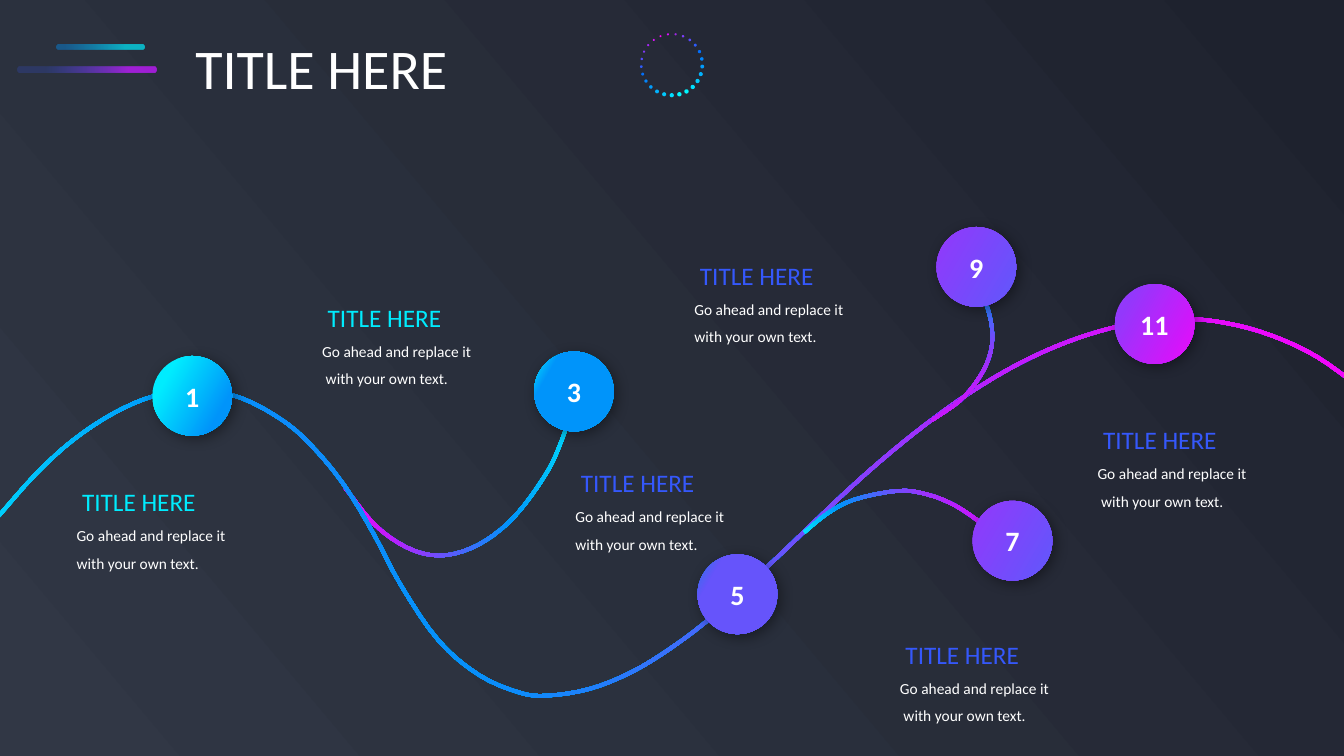
import math

from lxml import etree
from pptx import Presentation
from pptx import util as u
from pptx.dml.color import RGBColor
from pptx.enum import shapes, text
from pptx.oxml import ns

FONT = "Calibri"
WHITE = "FFFFFF"
CYAN = "00ECFE"
AZURE = "0094FA"
BLUE = "3558FB"
VIOLET = "6654FB"
PURPLE = "9338FB"
MAGENTA = "BE1DFB"

CURVE_WIDTH = 0.09
CURVE_STEPS = 4
CURVE_STOPS = [(0, CYAN), (27, AZURE), (76, MAGENTA), (100, "FC02F9")]
CURVES = [
    (185, [(8.7, 12.29), (9.42, 13.2), (10.24, 13.79), (11.05, 14), (11.86, 13.82),
           (12.6, 13.36), (13.21, 12.73), (13.82, 11.84), (14.15, 11.11), (14.41, 10.36)]),
    (320, [(-0.03, 13), (0.89, 11.96), (1.83, 11.1), (2.87, 10.41), (3.91, 9.97),
           (4.93, 9.83), (6.05, 10.02), (7.19, 10.64), (7.98, 11.37), (8.71, 12.28),
           (9.42, 13.46), (10.11, 14.76), (11.05, 16.14), (12.07, 17.01), (13.08, 17.45),
           (13.79, 17.53), (14.86, 17.36), (15.93, 16.93), (16.94, 16.31), (17.93, 15.56),
           (18.85, 14.73), (19.71, 13.93), (20.45, 13.22), (21.26, 12.45), (22.2, 11.61),
           (23.27, 10.74), (24.41, 9.92), (25.65, 9.18), (26.97, 8.59), (28.35, 8.19),
           (29.77, 8.04), (30.89, 8.14), (32.03, 8.45), (33.17, 8.98), (34.29, 9.78)]),
    (320, [(20.27, 13.42), (20.84, 12.95), (21.53, 12.59), (22.63, 12.37),
           (23.37, 12.46), (24.09, 12.75), (24.84, 13.27), (25.21, 13.63)]),
    (58.5, [(24.27, 6.71), (24.65, 7.23), (24.9, 7.8), (25.01, 8.42),
            (24.93, 9), (24.65, 9.56), (24.19, 10.1), (23.48, 10.59)]),
]

RING_COLORS = """01DEFF 00F7FF 00F7FF 00DFFE 01C9FD 02B2FD 029CFD 0285FB 036EFA
2D5CFA 5748FD 7D3EFC 9F26E7 D813FB FC02F9 D912FC AA27FB 7F39F6 564EFC 2E5CFB
026FF9 0384FB 029CFB 02B2FD 01C9FD""".split()

BARS = [
    (0.44, 1.69, 3.51, [(0, BLUE, 20), (21, BLUE, 20), (80, MAGENTA, 80), (100, MAGENTA, 80)]),
    (1.42, 1.12, 2.21, [(0, AZURE, 40), (10, AZURE, 40), (79, CYAN, 70), (100, CYAN, 70)]),
]

PURPLE_STOPS = [(0, PURPLE), (89, VIOLET), (100, VIOLET)]
NODES = [
    ("1", 3.84, 8.97, [(0, CYAN), (21, CYAN), (80, AZURE), (100, AZURE)]),
    ("3", 13.46, 8.86, [(0, CYAN), (22, AZURE), (100, AZURE)]),
    ("5", 17.58, 13.97, [(0, "2676E8"), (22, VIOLET), (100, VIOLET)]),
    ("7", 24.51, 12.62, PURPLE_STOPS),
    ("9", 23.6, 5.72, PURPLE_STOPS),
    ("11", 28.09, 7.16, [(0, PURPLE), (18, PURPLE), (100, "E90AFA")]),
]

CAPTIONS = [
    (1.68, 11.76, CYAN, 0),
    (22.43, 15.6, BLUE, 0.09),
    (7.87, 7.11, CYAN, 0.09),
    (14.25, 11.28, BLUE, 0),
    (17.25, 6.05, BLUE, 0),
    (27.41, 10.19, BLUE, 0.09),
]


def color(code):
    return RGBColor.from_string(code)


def add_color(parent, code, opacity):
    element = etree.SubElement(parent, ns.qn("a:srgbClr"), val=code)
    if opacity < 100:
        etree.SubElement(element, ns.qn("a:alpha"), val=str(opacity * 1000))


def paint_gradient(owner, fill, stops, angle):
    fill.gradient()
    fill.gradient_angle = 360 - angle
    stop_list = owner.find(".//" + ns.qn("a:gsLst"))
    for stop in list(stop_list):
        stop_list.remove(stop)
    for position, code, *opacity in stops:
        stop = etree.SubElement(stop_list, ns.qn("a:gs"), pos=str(position * 1000))
        add_color(stop, code, opacity[0] if opacity else 100)


def add_plain(page, kind, left, top, width, height):
    shape = page.shapes.add_shape(kind, u.Cm(left), u.Cm(top), u.Cm(width), u.Cm(height))
    shape.shadow.inherit = False
    shape.line.fill.background()
    return shape


def add_shadow(shape):
    effects = shape.element.spPr.find(ns.qn("a:effectLst"))
    shadow = etree.SubElement(
        effects, ns.qn("a:outerShdw"), blurRad=str(u.Pt(10)), dist=str(u.Pt(3)),
        dir=str(45 * 60000), algn="tl", rotWithShape="0")
    add_color(shadow, "000000", 40)


def style(paragraph, size, code, bold=False):
    paragraph.font.name = FONT
    paragraph.font.size = u.Pt(size)
    paragraph.font.bold = bold
    paragraph.font.color.rgb = color(code)


def smooth(knots):
    padded = [knots[0], *knots, knots[-1]]
    points = []
    for a, b, c, d in zip(padded, padded[1:], padded[2:], padded[3:]):
        for step in range(CURVE_STEPS):
            t = step / CURVE_STEPS
            points.append(tuple(
                q + t * (r - p) / 2 + t**2 * (2 * p - 5 * q + 4 * r - s) / 2
                + t**3 * (3 * q - p - 3 * r + s) / 2
                for p, q, r, s in zip(a, b, c, d)))
    return points + [knots[-1]]


def add_curve(page, angle, knots):
    points = smooth(knots)
    upper, lower = [], []
    for before, (x, y), after in zip([points[0]] + points, points, points[1:] + points[-1:]):
        run, rise = after[0] - before[0], after[1] - before[1]
        reach = CURVE_WIDTH / 2 / math.hypot(run, rise)
        upper.append((u.Cm(x + rise * reach), u.Cm(y - run * reach)))
        lower.append((u.Cm(x - rise * reach), u.Cm(y + run * reach)))
    outline = upper + lower[::-1]
    builder = page.shapes.build_freeform(*outline[0])
    builder.add_line_segments(outline[1:], close=True)
    curve = builder.convert_to_shape()
    curve.shadow.inherit = False
    curve.line.fill.background()
    paint_gradient(curve.element, curve.fill, CURVE_STOPS, angle)


def add_ring(page, center_x, center_y, radius):
    turn = 2 * math.pi / len(RING_COLORS)
    for index, code in enumerate(RING_COLORS):
        angle = math.pi / 2 - index * turn
        size = 0.08 + 0.03 * math.cos((index - 2) * turn)
        dot = add_plain(page, shapes.MSO_SHAPE.OVAL,
                        center_x + radius * math.cos(angle) - size / 2,
                        center_y + radius * math.sin(angle) - size / 2, size, size)
        dot.fill.solid()
        dot.fill.fore_color.rgb = color(code)


def add_bar(page, left, top, width, stops):
    bar = add_plain(page, shapes.MSO_SHAPE.ROUNDED_RECTANGLE, left, top, width, 0.13)
    bar.adjustments[0] = 0.42
    paint_gradient(bar.element, bar.fill, stops, 0)


def add_node(page, number, left, top, stops):
    node = add_plain(page, shapes.MSO_SHAPE.OVAL, left, top, 2.01, 2.01)
    paint_gradient(node.element, node.fill, stops, 30)
    add_shadow(node)
    frame = node.text_frame
    frame.vertical_anchor = text.MSO_ANCHOR.MIDDLE
    para = frame.paragraphs[0]
    para.text = number
    para.alignment = text.PP_ALIGN.CENTER
    style(para, 20, WHITE, bold=True)


def add_caption(page, left, top, title_color, last_indent):
    box = page.shapes.add_textbox(u.Cm(left), u.Cm(top), u.Cm(4.39), u.Cm(2.82))
    frame = box.text_frame
    frame.word_wrap = True
    frame.auto_size = text.MSO_AUTO_SIZE.SHAPE_TO_FIT_TEXT
    lines = [("TITLE HERE", 18, title_color, 0.14),
             ("Go ahead and replace it", 11, WHITE, 0),
             ("with your own text.", 11, WHITE, last_indent)]
    for index, (words, size, code, indent) in enumerate(lines):
        para = frame.add_paragraph() if index else frame.paragraphs[0]
        para.text = words
        para.line_spacing = 1.5
        para._p.get_or_add_pPr().set("marL", str(u.Cm(indent)))
        style(para, size, code)


def set_title(page, words):
    title = page.shapes.title
    title.left, title.top = u.Cm(4.67), u.Cm(0.71)
    title.width, title.height = u.Cm(6.93), u.Cm(1.96)
    frame = title.text_frame
    frame.word_wrap = True
    frame.auto_size = text.MSO_AUTO_SIZE.NONE
    frame.vertical_anchor = text.MSO_ANCHOR.TOP
    para = frame.paragraphs[0]
    para.text = words
    para.alignment = text.PP_ALIGN.LEFT
    style(para, 40, WHITE)


def main():
    deck = Presentation()
    deck.slide_width, deck.slide_height = u.Cm(33.87), u.Cm(19.05)
    page = deck.slides.add_slide(deck.slide_layouts[5])
    paint_gradient(page.element, page.background.fill, [(0, "313745"), (100, "1E222E")], 320)
    for curve in CURVES:
        add_curve(page, *curve)
    add_ring(page, 16.93, 1.63, 0.77)
    for bar in BARS:
        add_bar(page, *bar)
    set_title(page, "TITLE HERE")
    for node in NODES:
        add_node(page, *node)
    for caption in CAPTIONS:
        add_caption(page, *caption)
    deck.save("out.pptx")


if __name__ == "__main__":
    main()
